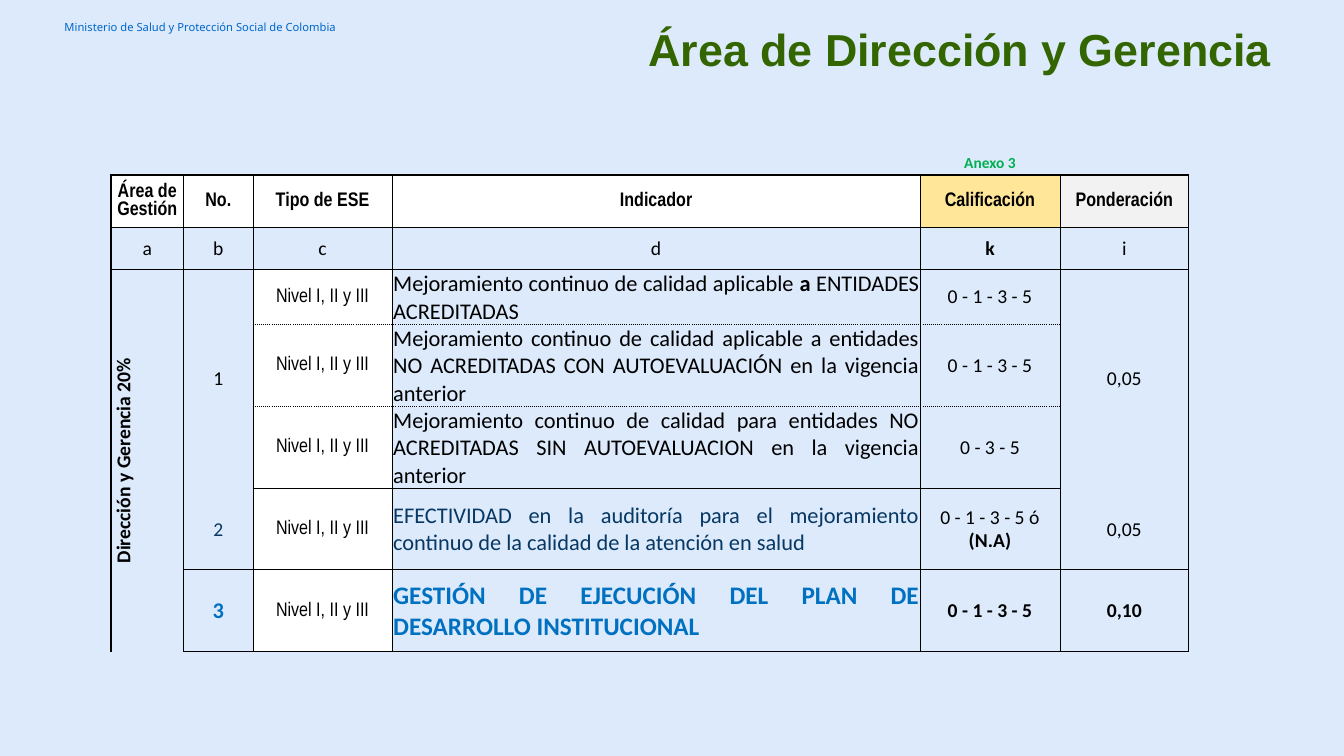
from dataclasses import dataclass

from lxml.etree import SubElement
from pptx import Presentation
from pptx.dml.color import RGBColor
from pptx.enum.text import MSO_ANCHOR as Anchor, PP_ALIGN as Align
from pptx.oxml.ns import qn
from pptx.util import Pt


@dataclass(frozen=True)
class Theme:
    background: str = "DCEAFB"
    ministry: str = "0066CD"
    title: str = "336600"
    annex: str = "00B050"
    ink: str = "000000"
    navy: str = "073763"
    blue: str = "0070C0"
    white: str = "FFFFFF"
    amber: str = "FFE699"
    grey: str = "F2F2F2"
    ministry_size: float = 8
    annex_size: float = 11
    cell_size: float = 14
    indicator_size: float = 16
    plan_size: float = 18
    title_size: float = 32
    ministry_font: str = "Noto Sans"
    title_font: str = "Arial"
    narrow_font: str = "Arial Narrow"
    body_font: str = "Calibri"


THEME = Theme()


@dataclass(frozen=True)
class Entry:
    """Text of one cell; each paragraph is a list of (text, bold) runs."""
    paragraphs: list
    size: float = THEME.cell_size
    font: str = THEME.body_font
    color: str = THEME.ink
    align: Align = Align.CENTER
    fill: str = ""


def plain(text, bold=False, **style):
    return Entry([[(text, bold)]], **style)


def header(text, fill=THEME.white):
    return plain(text, True, font=THEME.narrow_font, fill=fill)


def indicator(*runs, size=THEME.indicator_size, color=THEME.ink):
    return Entry([list(runs)], size=size, color=color, align=Align.JUSTIFY)


COLUMN_WIDTHS = [52, 49.5, 99.5, 377, 100, 92]
ROW_HEIGHTS = [17, 37.5, 30, 39] + [58.5] * 4
MERGES = [((3, 0), (7, 0)), ((3, 1), (5, 1)), ((3, 5), (5, 5))]
LEVEL = plain("Nivel I, II y III", font=THEME.narrow_font, fill=THEME.white)
FULL_SCALE = "0 - 1 - 3 - 5"
ROWS = [
    [None] * 4 + [plain("Anexo 3", True, size=THEME.annex_size, color=THEME.annex), None],
    [header("Área de Gestión"), header("No."), header("Tipo de ESE"), header("Indicador"),
     header("Calificación", THEME.amber), header("Ponderación", THEME.grey)],
    [plain(letter, letter == "k") for letter in "abcdki"],
    [plain("Dirección y Gerencia 20%", True), plain("1"), LEVEL,
     indicator(("Mejoramiento continuo de calidad aplicable ", False), ("a ", True),
               ("ENTIDADES ACREDITADAS", False)),
     plain(FULL_SCALE), plain("0,05")],
    [None, None, LEVEL,
     indicator(("Mejoramiento continuo de calidad aplicable a entidades NO ACREDITADAS "
                "CON AUTOEVALUACIÓN en la vigencia anterior", False)),
     plain(FULL_SCALE), None],
    [None, None, LEVEL,
     indicator(("Mejoramiento continuo de calidad para entidades NO ACREDITADAS "
                "SIN AUTOEVALUACION en la vigencia anterior", False)),
     plain("0 - 3 - 5"), None],
    [None, plain("2", color=THEME.navy), LEVEL,
     indicator(("EFECTIVIDAD en la auditoría para el mejoramiento continuo de la calidad "
                "de la atención en salud", False), color=THEME.navy),
     Entry([[(FULL_SCALE + " ó", False)], [("(N.A)", True)]]), plain("0,05")],
    [None, plain("3", True, size=THEME.indicator_size, color=THEME.blue), LEVEL,
     indicator(("GESTIÓN DE EJECUCIÓN DEL PLAN DE DESARROLLO INSTITUCIONAL", True),
               size=THEME.plan_size, color=THEME.blue),
     plain(FULL_SCALE, True), plain("0,10", True)],
]


def style_run(run, size, font, color, bold):
    run.font.size = Pt(size)
    run.font.name = font
    run.font.bold = bold
    run.font.color.rgb = RGBColor.from_string(color)


def add_label(slide, box, text, size, font, color, bold=False, align=Align.LEFT, spacing=1.0):
    shape = slide.shapes.add_textbox(*(Pt(length) for length in box))
    frame = shape.text_frame
    frame.word_wrap = True
    frame.vertical_anchor = Anchor.MIDDLE
    frame.text = text
    paragraph = frame.paragraphs[0]
    paragraph.alignment = align
    paragraph.line_spacing = spacing
    style_run(paragraph.runs[0], size, font, color, bold)


def horizontal_edge(line, column):
    """Width and dash of the rule above row `line`, or None."""
    inside_merge = any(first[0] < line <= last[0] and column == first[1]
                       for first, last in MERGES)
    if line == 0 or inside_merge:
        return None
    if line in (4, 5):
        return 0.5, "sysDot"
    return {1: 1.5, 3: 1, len(ROWS): 1}.get(line, 0.5), "solid"


def vertical_edge(line, row):
    """Width and dash of the rule left of column `line`, or None."""
    if row == 0:
        return None
    return (1.5 if line == 0 else 0.5), "solid"


def set_borders(cell, row, column):
    edges = {"a:lnL": vertical_edge(column, row), "a:lnR": vertical_edge(column + 1, row),
             "a:lnT": horizontal_edge(row, column), "a:lnB": horizontal_edge(row + 1, column)}
    properties = cell._tc.get_or_add_tcPr()
    for position, (tag, edge) in enumerate(edges.items()):
        line = SubElement(properties, qn(tag))
        properties.insert(position, line)
        if edge is None:
            SubElement(line, qn("a:noFill"))
            continue
        width, dash = edge
        line.set("w", str(Pt(width)))
        fill = SubElement(line, qn("a:solidFill"))
        SubElement(fill, qn("a:srgbClr")).set("val", THEME.ink)
        SubElement(line, qn("a:prstDash")).set("val", dash)


def fill_cell(cell, entry):
    cell.margin_left = cell.margin_right = cell.margin_top = Pt(0.7)
    cell.margin_bottom = 0
    cell.vertical_anchor = Anchor.MIDDLE
    cell.fill.background()
    frame = cell.text_frame
    if entry is None:
        end = SubElement(frame.paragraphs[0]._p, qn("a:endParaRPr"))
        end.set("sz", str(int(THEME.ministry_size * 100)))
        return
    if entry.fill:
        cell.fill.solid()
        cell.fill.fore_color.rgb = RGBColor.from_string(entry.fill)
    for index, runs in enumerate(entry.paragraphs):
        paragraph = frame.add_paragraph() if index else frame.paragraphs[0]
        paragraph.alignment = entry.align
        for text, bold in runs:
            run = paragraph.add_run()
            run.text = text
            style_run(run, entry.size, entry.font, entry.color, bold)


def add_indicator_table(slide, left, top):
    frame = slide.shapes.add_table(len(ROWS), len(COLUMN_WIDTHS), Pt(left), Pt(top),
                                   Pt(sum(COLUMN_WIDTHS)), Pt(sum(ROW_HEIGHTS)))
    table = frame.table
    table.first_row = table.horz_banding = False
    for column, width in zip(table.columns, COLUMN_WIDTHS):
        column.width = Pt(width)
    for row, height in zip(table.rows, ROW_HEIGHTS):
        row.height = Pt(height)
    for first, last in MERGES:
        table.cell(*first).merge(table.cell(*last))
    for row, entries in enumerate(ROWS):
        for column, entry in enumerate(entries):
            cell = table.cell(row, column)
            fill_cell(cell, entry)
            set_borders(cell, row, column)
    table.cell(3, 0)._tc.get_or_add_tcPr().set("vert", "vert270")


def main():
    presentation = Presentation()
    presentation.slide_width, presentation.slide_height = Pt(960), Pt(540)
    slide = presentation.slides.add_slide(presentation.slide_layouts[6])
    slide.background.fill.solid()
    slide.background.fill.fore_color.rgb = RGBColor.from_string(THEME.background)
    add_label(slide, (39, 10, 224.5, 19), "Ministerio de Salud y Protección Social de Colombia",
              THEME.ministry_size, THEME.ministry_font, THEME.ministry)
    add_label(slide, (400, 12, 515.5, 50.5), "Área de Dirección y Gerencia", THEME.title_size,
              THEME.title_font, THEME.title, bold=True, align=Align.RIGHT, spacing=0.9)
    add_indicator_table(slide, 79.2, 108)
    presentation.save("out.pptx")


if __name__ == "__main__":
    main()
